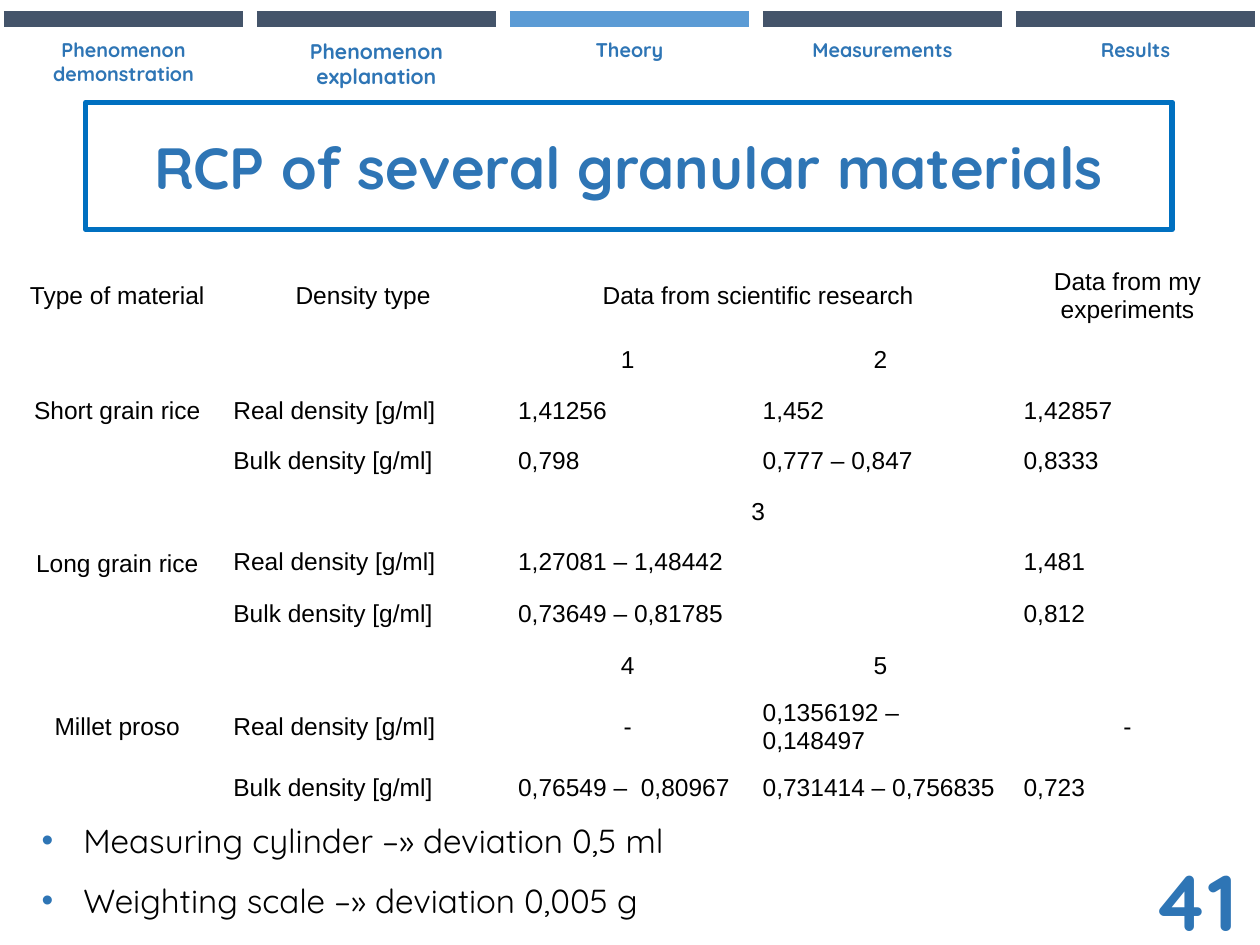
from dataclasses import dataclass

from lxml.etree import SubElement
from pptx import Presentation
from pptx.dml.color import RGBColor
from pptx.enum.shapes import MSO_CONNECTOR
from pptx.enum.text import MSO_ANCHOR, MSO_AUTO_SIZE, PP_ALIGN
from pptx.oxml.ns import qn
from pptx.util import Cm, Pt


@dataclass(frozen=True)
class Theme:
    blue: str = "2E75B5"
    frame: str = "0070C0"
    tab: str = "44546A"
    active_tab: str = "5B9BD5"
    black: str = "000000"
    display_font: str = "Quicksand"
    table_font: str = "Arial"
    title_size: float = 33.2
    bullet_size: float = 19
    number_size: float = 45.2
    table_size: float = 14
    tab_size: float = 11.3
    large_tab_size: float = 12.1


@dataclass(frozen=True)
class Box:
    """A region of the slide, in centimetres."""
    left: float
    top: float
    width: float
    height: float

    def lengths(self):
        return [Cm(v) for v in (self.left, self.top, self.width, self.height)]


THEME = Theme()

SECTIONS = [
    ("Phenomenon demonstration", THEME.tab, THEME.tab_size),
    ("Phenomenon explanation", THEME.tab, THEME.large_tab_size),
    ("Theory", THEME.active_tab, THEME.tab_size),
    ("Measurements", THEME.tab, THEME.tab_size),
    ("Results", THEME.tab, THEME.tab_size),
]

REAL, BULK = "Real density [g/ml]", "Bulk density [g/ml]"
DENSITIES = [
    ["Type of material", "Density type", "Data from scientific research", "",
     "Data from my experiments"],
    ["Short grain rice", "", "1", "2", ""],
    ["", REAL, "1,41256", "1,452", "1,42857"],
    ["", BULK, "0,798", "0,777 – 0,847", "0,8333"],
    ["Long grain rice", "", "3", "", ""],
    ["", REAL, "1,27081 – 1,48442", "", "1,481"],
    ["", BULK, "0,73649 – 0,81785", "", "0,812"],
    ["Millet proso", "", "4", "5", ""],
    ["", REAL, "-", "0,1356192 –  0,148497", "-"],
    ["", BULK, "0,76549 –  0,80967", "0,731414 – 0,756835", "0,723"],
]
COLUMN_WIDTHS = [4.17, 5.74, 4.93, 5.26, 4.7]
ROW_HEIGHTS = [1.57, 0.99, 1.02, 1.02, 0.99, 1.02, 1.07, 0.99, 1.27, 1.02]
MATERIAL_ROWS = (1, 4, 7)
SHARED_RESEARCH_ROWS = (0, 4, 5, 6)

DEVIATIONS = [
    "Measuring cylinder –» deviation 0,5 ml",
    "Weighting scale –» deviation 0,005 g",
]


def apply_format(target, values):
    for name, value in values.items():
        setattr(target, name, value)


def write(paragraph, text, size, color=THEME.blue, font=THEME.display_font,
          bold=True, align=PP_ALIGN.CENTER):
    paragraph.alignment = align
    run = paragraph.add_run()
    run.text = text
    apply_format(run.font, {"name": font, "size": Pt(size), "bold": bold})
    run.font.color.rgb = RGBColor.from_string(color)


def add_text_frame(slide, box, inset_x, inset_y, **frame_format):
    area = slide.shapes.add_textbox(*box.lengths())
    apply_format(area.text_frame, {
        "word_wrap": True,
        "margin_left": Cm(inset_x), "margin_right": Cm(inset_x),
        "margin_top": Cm(inset_y), "margin_bottom": Cm(inset_y),
        **frame_format,
    })
    return area


def add_navigation(slide, box):
    """Section bars with their labels underneath."""
    pitch, bar_width = 5.1, 4.82
    for index, (section, color, size) in enumerate(SECTIONS):
        left = box.left + index * pitch
        bar = slide.shapes.add_connector(
            MSO_CONNECTOR.STRAIGHT, Cm(left), Cm(box.top),
            Cm(left + bar_width), Cm(box.top))
        bar.line.color.rgb = RGBColor.from_string(color)
        bar.line.width = Pt(9)
        SubElement(bar._element.spPr, qn("a:effectLst"))

        label_box = Box(left, box.top + 0.19, bar_width, box.height - 0.19)
        label = add_text_frame(slide, label_box, 0.2, 0.2,
                               auto_size=MSO_AUTO_SIZE.SHAPE_TO_FIT_TEXT)
        write(label.text_frame.paragraphs[0], section, size)


def add_title(slide, box):
    title = add_text_frame(slide, box, 0.2, 0.1,
                           vertical_anchor=MSO_ANCHOR.MIDDLE)
    title.line.color.rgb = RGBColor.from_string(THEME.frame)
    title.line.width = Pt(3)
    write(title.text_frame.paragraphs[0], "RCP of several granular materials",
          THEME.title_size)


def add_density_table(slide, box):
    table = slide.shapes.add_table(
        len(DENSITIES), len(COLUMN_WIDTHS), *box.lengths()).table
    apply_format(table, {"first_row": False, "horz_banding": False})
    for column, width in zip(table.columns, COLUMN_WIDTHS):
        column.width = Cm(width)
    for row, height in zip(table.rows, ROW_HEIGHTS):
        row.height = Cm(height)

    # Materials span three rows, shared research data two columns
    for r in MATERIAL_ROWS:
        table.cell(r, 0).merge(table.cell(r + 2, 0))
    for r in SHARED_RESEARCH_ROWS:
        table.cell(r, 2).merge(table.cell(r, 3))

    for r, values in enumerate(DENSITIES):
        for c, value in enumerate(values):
            cell = table.cell(r, c)
            cell.fill.background()
            cell.vertical_anchor = MSO_ANCHOR.MIDDLE
            if value:
                centred = r == 0 or c == 0 or len(value) == 1
                write(cell.text_frame.paragraphs[0], value, THEME.table_size,
                      THEME.black, THEME.table_font, False,
                      PP_ALIGN.CENTER if centred else PP_ALIGN.LEFT)


def add_deviations(slide, box):
    """Bulleted measuring errors."""
    frame = add_text_frame(slide, box, 0.25, 0.25).text_frame
    for index, deviation in enumerate(DEVIATIONS):
        paragraph = frame.add_paragraph() if index else frame.paragraphs[0]
        write(paragraph, deviation, THEME.bullet_size, THEME.black,
              bold=False, align=PP_ALIGN.LEFT)
        paragraph.line_spacing = 1.5
        properties = paragraph._p.get_or_add_pPr()
        properties.set("marL", str(Cm(0.97)))
        properties.set("indent", str(Cm(-0.84)))
        bullet_color = SubElement(properties, qn("a:buClr"))
        SubElement(bullet_color, qn("a:srgbClr"), val=THEME.blue)
        SubElement(properties, qn("a:buFont"), typeface=THEME.table_font)
        SubElement(properties, qn("a:buChar"), char="•")


def add_page_number(slide, box):
    number = add_text_frame(slide, box, 0.2, 0.1)
    write(number.text_frame.paragraphs[0], "41", THEME.number_size,
          align=PP_ALIGN.RIGHT)


def main():
    deck = Presentation()
    apply_format(deck, {"slide_width": Cm(25.4), "slide_height": Cm(19.05)})
    slide = deck.slides.add_slide(deck.slide_layouts[6])
    add_title(slide, Box(1.73, 2.06, 21.9, 2.57))
    add_deviations(slide, Box(0.46, 15.88, 21.9, 2.77))
    add_page_number(slide, Box(21.26, 17.09, 3.89, 1.78))
    add_density_table(slide, Box(0.28, 5.18, sum(COLUMN_WIDTHS), sum(ROW_HEIGHTS)))
    add_navigation(slide, Box(0.08, 0.38, 25.22, 1.56))
    deck.save("out.pptx")


if __name__ == "__main__":
    main()
